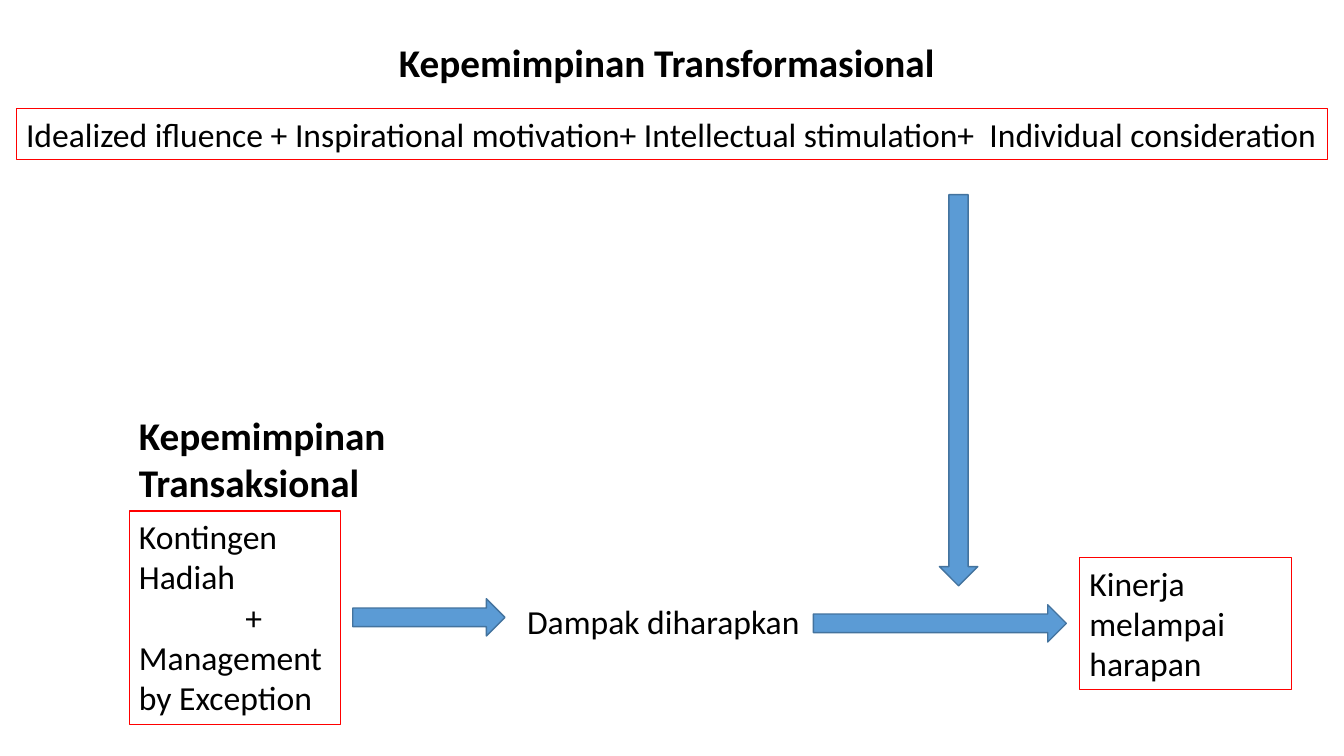
"""Build a slide relating transformational and transactional leadership to performance."""
from dataclasses import dataclass

from pptx import Presentation
from pptx import util as u
from pptx.dml.color import RGBColor
from pptx.enum import shapes
from pptx.slide import Slide
from pptx.text.text import _Paragraph

FONT = "Calibri"
BLACK, RED, BLUE, DARK_BLUE = "000000", "FF0000", "5B9BD5", "43739E"
RIGHT, DOWN = shapes.MSO_SHAPE.RIGHT_ARROW, shapes.MSO_SHAPE.DOWN_ARROW
PLUS_INDENT = 76


@dataclass
class Label:
    left: float
    top: float
    width: float
    height: float
    lines: tuple[str, ...]
    size: float = 24
    bold: bool = False
    framed: bool = False
    wrap: bool = True


@dataclass
class Arrow:
    kind: shapes.MSO_SHAPE
    left: float
    top: float
    width: float
    height: float


LABELS = [
    Label(92.2, 290.2, 211, 75, ("Kepemimpinan Transaksional",), size=28, bold=True),
    Label(92.2, 365, 151.2, 152.6,
          ("Kontingen", "Hadiah", "+", "Management by Exception"), framed=True),
    Label(369.4, 425.5, 211, 36, ("Dampak diharapkan",)),
    Label(277.9, 23.8, 449.3, 41, ("Kepemimpinan Transformasional",), size=28, bold=True),
    Label(11.5, 77.8, 936.7, 36,
          ("Idealized ifluence + Inspirational motivation+ Intellectual stimulation+"
           "  Individual consideration",), framed=True, wrap=False),
    Label(771.1, 398.2, 151.2, 94.3, ("Kinerja melampai harapan",), framed=True),
]
ARROWS = [
    Arrow(RIGHT, 252, 427.7, 108.7, 26.6),
    Arrow(RIGHT, 581, 432, 180.7, 26.6),
    Arrow(DOWN, 671, 139, 27.4, 279.4),
]


def color(value: str) -> RGBColor:
    return RGBColor.from_string(value)


def write(para: _Paragraph, content: str, *, size: float, bold: bool, indent: float) -> None:
    span = para.add_run()
    span.text = content
    span.font.name = FONT
    span.font.size = u.Pt(size)
    span.font.bold = bold
    span.font.color.rgb = color(BLACK)
    if indent:
        para._p.get_or_add_pPr().set("marL", str(u.Pt(indent)))


def draw_label(page: Slide, label: Label) -> None:
    box = page.shapes.add_textbox(u.Pt(label.left), u.Pt(label.top),
                                  u.Pt(label.width), u.Pt(label.height))
    frame = box.text_frame
    frame.word_wrap = label.wrap
    if label.framed:
        box.line.color.rgb = color(RED)
        box.line.width = u.Pt(0.75)
    for index, line in enumerate(label.lines):
        para = frame.add_paragraph() if index else frame.paragraphs[0]
        write(para, line, size=label.size, bold=label.bold,
              indent=PLUS_INDENT if line == "+" else 0)


def draw_arrow(page: Slide, arrow: Arrow) -> None:
    shape = page.shapes.add_shape(arrow.kind, u.Pt(arrow.left), u.Pt(arrow.top),
                                  u.Pt(arrow.width), u.Pt(arrow.height))
    shape.shadow.inherit = False
    shape.fill.solid()
    shape.fill.fore_color.rgb = color(BLUE)
    shape.line.color.rgb = color(DARK_BLUE)
    shape.line.width = u.Pt(1)


def main() -> None:
    deck = Presentation()
    deck.slide_width, deck.slide_height = u.Pt(960), u.Pt(540)
    page = deck.slides.add_slide(deck.slide_layouts[6])
    for label in LABELS:
        draw_label(page, label)
    for arrow in ARROWS:
        draw_arrow(page, arrow)
    deck.save("out.pptx")


if __name__ == "__main__":
    main()
